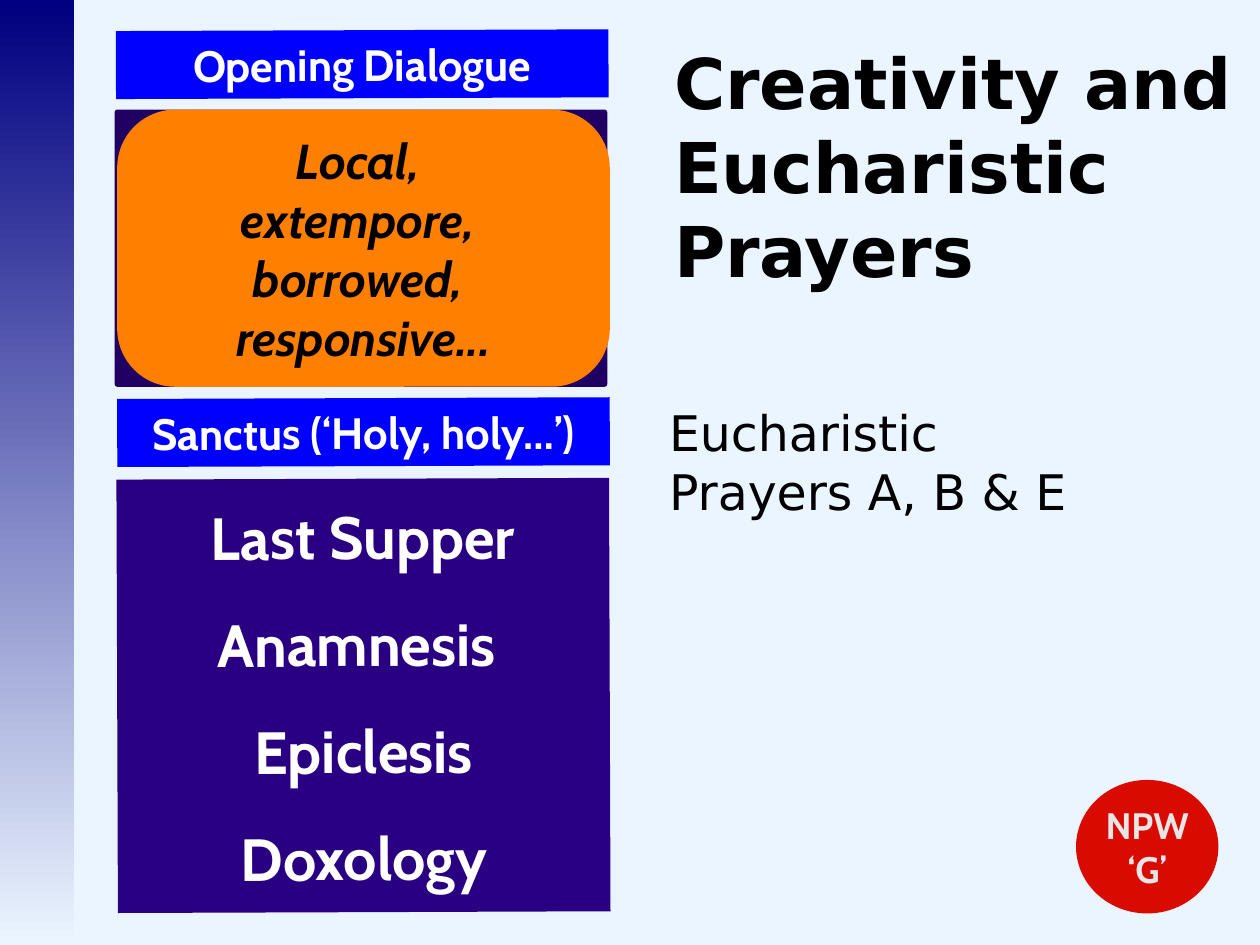
from dataclasses import dataclass

from pptx import Presentation
from pptx.dml.color import RGBColor
from pptx.enum.shapes import MSO_SHAPE
from pptx.enum.text import MSO_ANCHOR, MSO_AUTO_SIZE, PP_ALIGN
from pptx.oxml.ns import qn
from pptx.util import Inches, Pt

RECTANGLE, ROUNDED, OVAL = MSO_SHAPE.RECTANGLE, MSO_SHAPE.ROUNDED_RECTANGLE, MSO_SHAPE.OVAL
TOP, MIDDLE = MSO_ANCHOR.TOP, MSO_ANCHOR.MIDDLE
LEFT, CENTER = PP_ALIGN.LEFT, PP_ALIGN.CENTER
FIXED_SIZE = MSO_AUTO_SIZE.NONE


@dataclass(frozen=True)
class Theme:
    background: str = "EBF5FF"
    band: str = "000080"
    response: str = "0000FF"
    prayer: str = "290082"
    preface: str = "200063"
    local: str = "FF8000"
    badge: str = "D90B00"
    badge_text: str = "E6E6E6"
    light: str = "FFFFFF"
    dark: str = "000000"
    block_font: str = "Cabin"
    heading_font: str = "DejaVu Sans"
    title_size: int = 40
    prayer_size: int = 34
    body_size: int = 28
    response_size: int = 25
    badge_size: int = 21


THEME = Theme()
COLUMN_WIDTH = 3.91
TILT = -0.2


@dataclass(frozen=True)
class Block:
    left: float
    top: float
    width: float
    height: float
    fill: str
    lines: tuple[str, ...] = ()
    size: int = THEME.response_size
    color: str = THEME.light
    kind: int = RECTANGLE
    corner: float | None = None
    rotation: float = 0
    italic: bool = False
    anchor: int = MIDDLE
    spacings: tuple[float, ...] = ()


BLOCKS = (
    Block(8.54, 6.19, 1.13, 1.06, THEME.badge, ("NPW", "‘G’"), size=THEME.badge_size,
          color=THEME.badge_text, kind=OVAL),
    Block(0.92, 0.24, COLUMN_WIDTH, 0.54, THEME.response, ("Opening Dialogue",), rotation=TILT),
    Block(0.93, 3.16, COLUMN_WIDTH, 0.54, THEME.response, ("Sanctus (‘Holy, holy…’)",),
          rotation=TILT),
    Block(0.93, 3.8, COLUMN_WIDTH, 3.44, THEME.prayer,
          ("Last Supper", "Anamnesis ", "Epiclesis", "Doxology"), size=THEME.prayer_size,
          rotation=TILT, anchor=TOP, spacings=(1.3, 1.5, 1.5, 1.5)),
    Block(0.91, 0.87, COLUMN_WIDTH, 2.2, THEME.preface, kind=ROUNDED, corner=0.01),
    Block(0.93, 0.87, COLUMN_WIDTH, 2.2, THEME.local,
          ("Local, ", "extempore, ", "borrowed, ", "responsive..."), size=THEME.body_size,
          color=THEME.dark, kind=ROUNDED, corner=0.21, italic=True),
)


def write_text(shape, lines, *, size, color, font, bold=False, italic=False,
               align=LEFT, anchor=MIDDLE, spacings=()) -> None:
    frame = shape.text_frame
    frame.auto_size = FIXED_SIZE
    frame.word_wrap = True
    frame.vertical_anchor = anchor
    frame.margin_left = frame.margin_top = frame.margin_right = frame.margin_bottom = 0
    for index, line in enumerate(lines):
        para = frame.add_paragraph() if index else frame.paragraphs[0]
        para.alignment = align
        para.space_before = Pt(0)
        if spacings:
            para.line_spacing = spacings[index]
        span = para.add_run()
        span.text = line
        span.font.name = font
        span.font.size = Pt(size)
        span.font.bold = bold
        span.font.italic = italic
        span.font.color.rgb = RGBColor.from_string(color)


def add_plain_shape(page, kind: int, left: float, top: float, width: float, height: float):
    """Add a preset shape without shadow or outline."""
    shape = page.shapes.add_shape(kind, Inches(left), Inches(top), Inches(width), Inches(height))
    shape.shadow.inherit = False
    shape.line.fill.background()
    return shape


def add_block(page, block: Block) -> None:
    shape = add_plain_shape(page, block.kind, block.left, block.top, block.width, block.height)
    shape.fill.solid()
    shape.fill.fore_color.rgb = RGBColor.from_string(block.fill)
    shape.rotation = block.rotation
    if block.corner is not None:
        shape.adjustments[0] = block.corner
    if block.lines:
        write_text(shape, block.lines, size=block.size, color=block.color,
                   font=THEME.block_font, bold=True, italic=block.italic, align=CENTER,
                   anchor=block.anchor, spacings=block.spacings)


def add_side_band(page) -> None:
    band = add_plain_shape(page, RECTANGLE, 0, 0, 0.59, 7.5)
    band.fill.gradient()
    band.fill.gradient_angle = 270
    for stop, color, position in zip(band.fill.gradient_stops,
                                     (THEME.band, THEME.background), (0, 1)):
        stop.color.rgb = RGBColor.from_string(color)
        stop.position = position


def place(shape, left: float, top: float, width: float, height: float) -> None:
    shape.left, shape.top = Inches(left), Inches(top)
    shape.width, shape.height = Inches(width), Inches(height)


def remove_bullet(para) -> None:
    properties = para._p.get_or_add_pPr()
    properties.set("marL", "0")
    properties.set("indent", "0")
    properties.append(properties.makeelement(qn("a:buNone"), {}))


def main() -> None:
    deck = Presentation()
    deck.slide_width, deck.slide_height = Inches(10), Inches(7.5)
    page = deck.slides.add_slide(deck.slide_layouts[1])
    page.background.fill.solid()
    page.background.fill.fore_color.rgb = RGBColor.from_string(THEME.background)

    add_side_band(page)
    title, body = page.shapes.title, page.placeholders[1]
    place(title, 5.35, 0.13, 4.5, 2.36)
    write_text(title, ("Creativity and Eucharistic Prayers",), size=THEME.title_size,
               color=THEME.dark, font=THEME.heading_font, bold=True)
    place(body, 5.31, 3.19, 3.54, 0.94)
    remove_bullet(body.text_frame.paragraphs[0])
    write_text(body, ("Eucharistic Prayers A, B & E",), size=THEME.body_size,
               color=THEME.dark, font=THEME.heading_font)
    for block in BLOCKS:
        add_block(page, block)
    deck.save("out.pptx")


if __name__ == "__main__":
    main()
